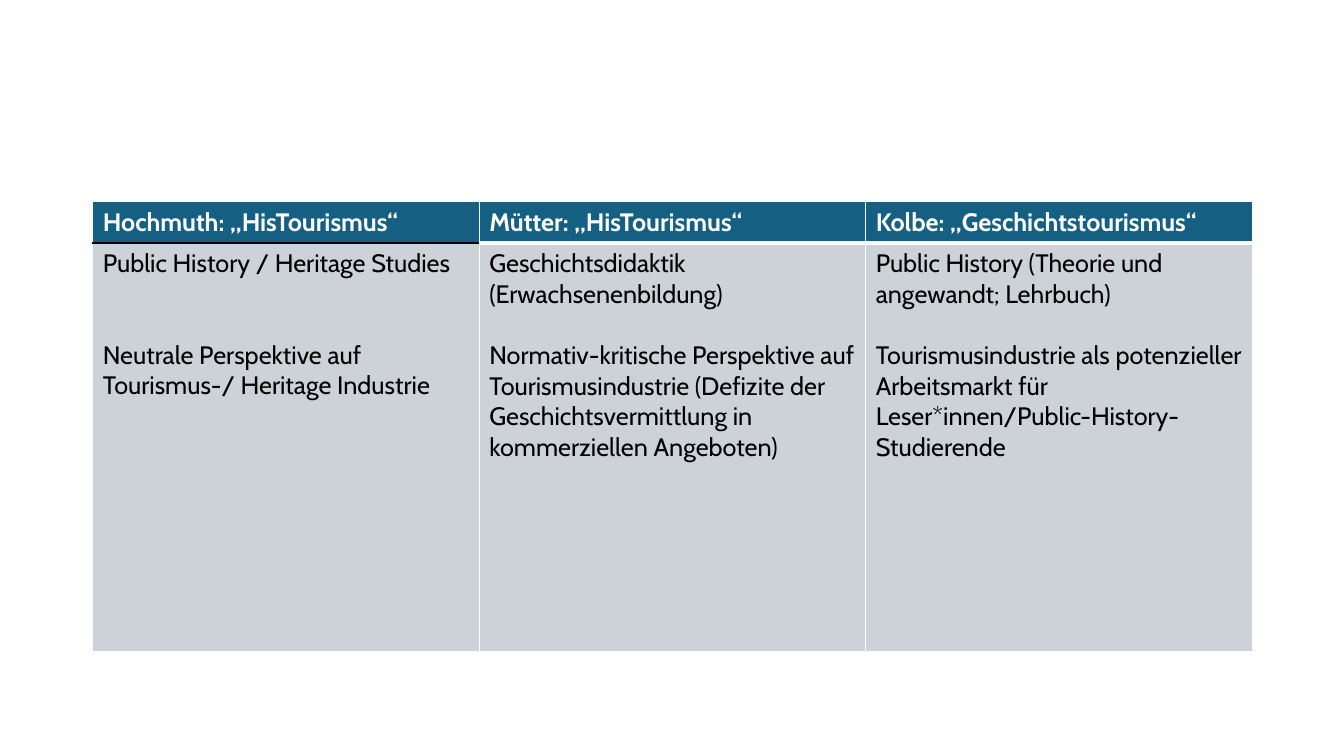
from lxml import etree
from pptx import Presentation
from pptx.dml.color import RGBColor
from pptx.oxml.ns import qn
from pptx.util import Inches, Pt

WHITE = RGBColor(0xFF, 0xFF, 0xFF)
BLACK = RGBColor(0x00, 0x00, 0x00)
BLUE = RGBColor(0x15, 0x60, 0x82)
GREY = RGBColor(0xCC, 0xD2, 0xD8)

LINE = 21.8  # height of one text line in points

# Each column: heading, field, view, lines of space between the two
COLUMNS = [
    ("Hochmuth: „HisTourismus“",
     "Public History / Heritage Studies",
     "Neutrale Perspektive auf Tourismus-/ Heritage Industrie", 2),
    ("Mütter: „HisTourismus“",
     "Geschichtsdidaktik (Erwachsenenbildung)",
     "Normativ-kritische Perspektive auf Tourismusindustrie (Defizite der "
     "Geschichtsvermittlung in kommerziellen Angeboten)", 1),
    ("Kolbe: „Geschichtstourismus“",
     "Public History (Theorie und angewandt; Lehrbuch)",
     "Tourismusindustrie als potenzieller Arbeitsmarkt für "
     "Leser*innen/Public-History-Studierende", 1),
]


class Deck:
    font = "Cabin"
    size = Pt(18)

    def __init__(self):
        self.prs = Presentation()
        self.prs.slide_width = Inches(13.33)
        self.prs.slide_height = Inches(7.5)
        self.slide = self.prs.slides.add_slide(self.prs.slide_layouts[6])

    def table(self, left, top, widths, heights):
        frame = self.slide.shapes.add_table(
            len(heights), len(widths), Inches(left), Inches(top),
            Inches(sum(widths)), Inches(sum(heights)))
        table = frame.table
        for col, width in zip(table.columns, widths):
            col.width = Inches(width)
        for row, height in zip(table.rows, heights):
            row.height = Inches(height)
        return table

    def cell(self, cell, texts, fill, color, bold=False, gap=0):
        cell.fill.solid()
        cell.fill.fore_color.rgb = fill
        frame = cell.text_frame
        frame.text = "\n".join(texts)
        for i, par in enumerate(frame.paragraphs):
            par.font.name = self.font
            par.font.size = self.size
            par.font.bold = bold
            par.font.color.rgb = color
            par.space_before = Pt(gap if i else 0)

    def border(self, cell, **edges):
        """Draw all four edges, thin and white unless given as (color, width)."""
        props = cell._tc.get_or_add_tcPr()
        for i, side in enumerate("LRTB"):
            color, width = edges.get(side, (WHITE, 1))
            line = etree.Element(qn("a:ln" + side), w=str(Pt(width)))
            fill = etree.SubElement(line, qn("a:solidFill"))
            etree.SubElement(fill, qn("a:srgbClr"), val=str(color))
            props.insert(i, line)


def main():
    deck = Deck()
    table = deck.table(0.92, 2, [11.5 / 3] * 3, [0.41, 4.05])

    for i, (head, field, view, lines) in enumerate(COLUMNS):
        rule = (WHITE, 3) if i else (BLACK, 1)

        # Heading
        top = table.cell(0, i)
        deck.cell(top, [head], BLUE, WHITE, bold=True)
        deck.border(top, B=rule)

        # Field and view
        body = table.cell(1, i)
        deck.cell(body, [field, view], GREY, BLACK, gap=lines * LINE)
        deck.border(body, T=rule)

    deck.prs.save("out.pptx")


if __name__ == "__main__":
    main()
